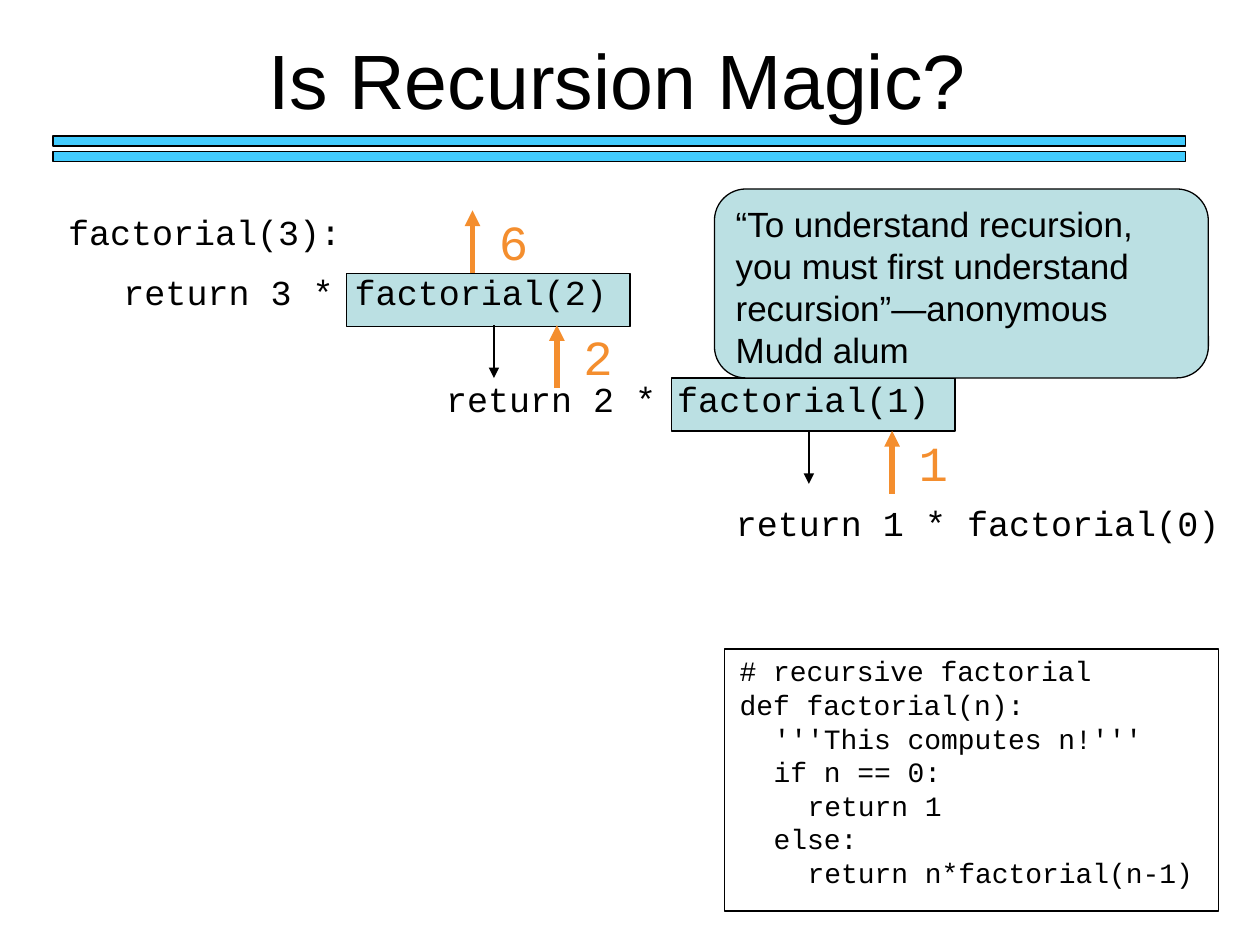
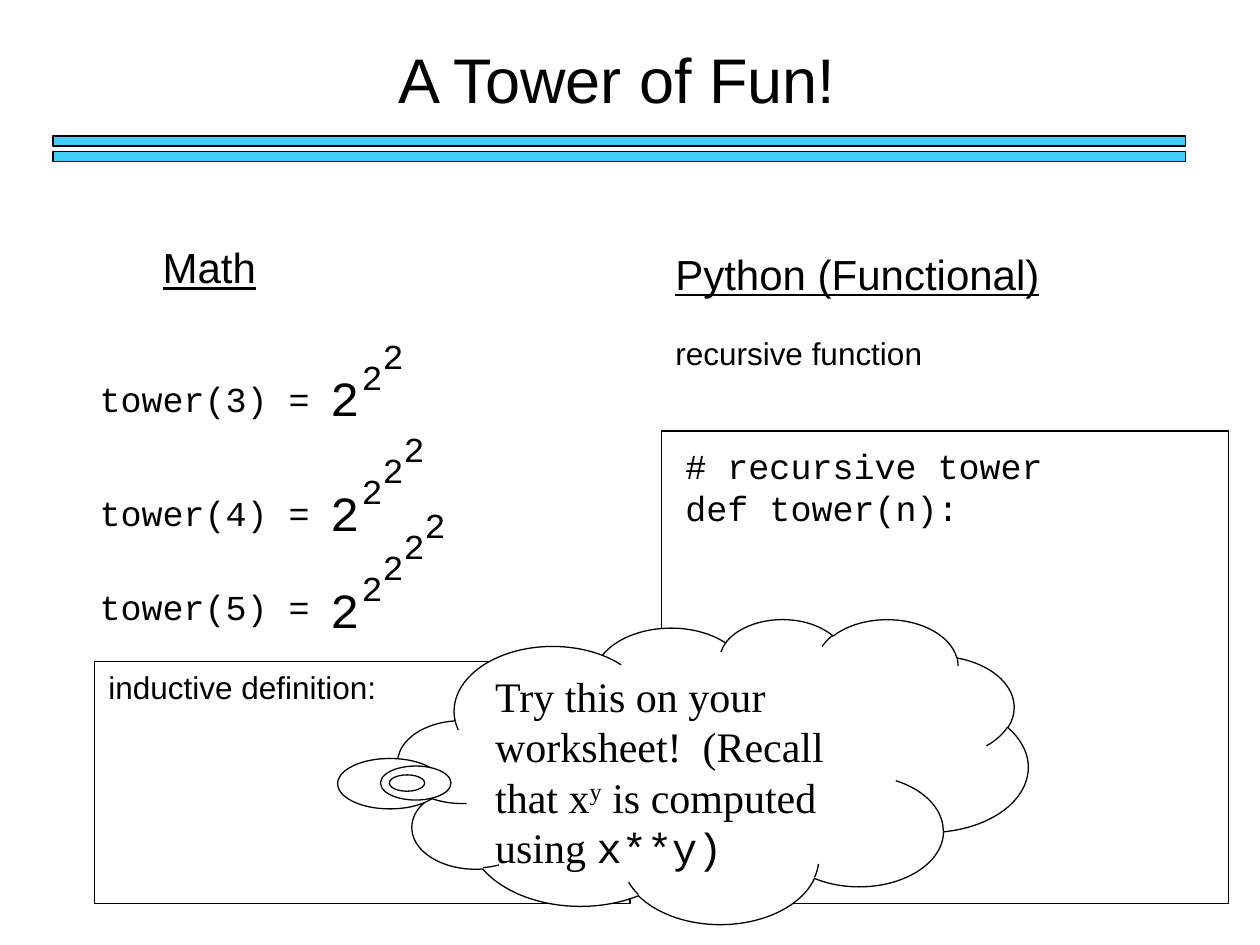
from lxml import etree
from pptx import Presentation
from pptx.dml.color import RGBColor
from pptx.enum import shapes, text
from pptx.oxml.ns import qn
from pptx.util import Inches, Pt

COLORS = {"ink": "000000", "bar": "42CBFD", "call": "BBE0E3",
          "result": "F48E2E", "paper": "FFFFFF"}
SANS, MONO, SERIF = "Arial", "Courier New", "Times New Roman"
SHAPE = shapes.MSO_SHAPE


def color(name):
    return RGBColor.from_string(COLORS[name])


def style(span, size, font, ink="ink", underline=False):
    span.font.size = Pt(size)
    span.font.name = font
    span.font.color.rgb = color(ink)
    if underline:
        span.font.underline = True


def add_text(page, box, content, size, font=MONO, ink="ink", underline=False,
             insets=(0.04, 0, 0.04, 0)):
    """Write each line of content as a paragraph and return the text frame."""
    frame = page.shapes.add_textbox(*map(Inches, box)).text_frame
    frame.word_wrap = True
    (frame.margin_left, frame.margin_top,
     frame.margin_right, frame.margin_bottom) = map(Inches, insets)
    frame.text = content
    for para in frame.paragraphs:
        for span in para.runs:
            style(span, size, font, ink, underline)
    return frame


def add_box(page, box, fill=None, kind=SHAPE.RECTANGLE):
    shape = page.shapes.add_shape(kind, *map(Inches, box))
    shape.shadow.inherit = False
    if fill:
        shape.fill.solid()
        shape.fill.fore_color.rgb = color(fill)
    else:
        shape.fill.background()
    shape.line.color.rgb = color("ink")
    shape.line.width = Pt(0.75)
    return shape


def add_arrow(page, x, start, end, ink="ink", width=0.75):
    """Draw a vertical arrow that points at end."""
    arrow = page.shapes.add_connector(
        shapes.MSO_CONNECTOR.STRAIGHT, *map(Inches, (x, start, x, end)))
    arrow.line.color.rgb = color(ink)
    arrow.line.width = Pt(width)
    etree.SubElement(arrow.line._get_or_add_ln(), qn("a:tailEnd"), type="triangle")
    etree.SubElement(arrow._element.spPr, qn("a:effectLst"))


def add_heading(page, title, size):
    frame = add_text(page, (0.42, 0, 9, 1.25), title, size, SANS,
                     insets=(0.1, 0.05, 0.14, 0.05))
    frame.vertical_anchor = text.MSO_ANCHOR.MIDDLE
    frame.paragraphs[0].alignment = text.PP_ALIGN.CENTER
    for top in (1.08, 1.2):
        add_box(page, (0.42, top, 8.99, 0.08), "bar")


def add_returned_value(page, x, tip, value):
    add_arrow(page, x, tip + 0.5, tip, "result", 3)
    add_text(page, (x + 0.17, tip + 0.01, 0.4, 0.54), value, 28, ink="result")


def add_call_chain(page):
    call_boxes = [(2.75, 2.17), (5.33, 3)]
    for left, top in call_boxes:
        add_box(page, (left, top, 2.25, 0.42), "call")
    add_text(page, (0.5, 1.67, 2.83, 0.43), "factorial(3):", 20)
    for left, top, n in [(0.94, 2.15, 3), (3.5, 3, 2), (5.8, 3.98, 1)]:
        add_text(page, (left, top, 4, 0.43), f"return {n} * factorial({n - 1})", 20)
    # Calls go down, results come back up
    for x, top in [(3.92, 2.58), (6.42, 3.42)]:
        add_arrow(page, x, top, top + 0.42)
    for x, tip, value in [(7.08, 3.42, "1"), (4.42, 2.58, "2"), (3.75, 1.67, "6")]:
        add_returned_value(page, x, tip, value)


def add_factorial_code(page, box):
    left, top, width, _ = box
    code = [(0, "# recursive factorial"), (0, "def factorial(n):"),
            (1, "'''This computes n!'''"), (1, "if n == 0:"), (2, "return 1"),
            (1, "else:"), (2, "return n*factorial(n-1)")]
    frame = add_text(page, (left + 0.08, top + 0.04, width - 0.1, 1.87),
                     "\n".join(line for _, line in code), 16)
    for para, (level, _) in zip(frame.paragraphs, code):
        para._p.get_or_add_pPr().set("marL", str(Inches(0.27 * level)))
    add_box(page, box)


def add_quote(page, box):
    left, top, width, height = box
    add_box(page, box, "call", SHAPE.ROUNDED_RECTANGLE)
    add_text(page, (left + 0.07, top + 0.07, width - 0.16, height - 0.03),
             "“To understand recursion, you must first understand "
             "recursion”—anonymous Mudd alum", 20, SANS,
             insets=(0.1, 0.04, 0.1, 0.04))


def add_tower(page, height, label_top, base_top):
    """Write tower(n) = 2^2^... with n twos, each a step up and right."""
    add_text(page, (0.75, label_top, 2.1, 0.43), f"tower({height}) =", 20)
    add_text(page, (2.58, base_top, 0.5, 0.54), "2", 28)
    for step in range(height - 1):
        exponent = (2.83 + step / 6, base_top - 0.1 - step / 6, 0.5, 0.43)
        add_text(page, exponent, "2", 20)


def add_math_column(page):
    add_text(page, (1.25, 1.92, 1.89, 0.49), "Math", 24, SANS, underline=True)
    for height, label_top, base_top in [(3, 3, 2.92), (4, 3.9, 3.83), (5, 4.65, 4.6)]:
        add_tower(page, height, label_top, base_top)
    add_box(page, (0.75, 5.25, 4.25, 1.92))
    add_text(page, (0.82, 5.3, 2.5, 0.39), "inductive definition:", 18, SANS)


def add_python_column(page, box):
    left, top, width, _ = box
    frame = add_text(page, (left + 0.07, 1.97, 3.5, 1.07),
                     "Python (Functional)\nrecursive function", 24, SANS)
    heading, caption = frame.paragraphs
    heading.runs[0].font.underline = True
    caption.runs[0].font.size = Pt(18)
    caption.space_before = Pt(20.5)
    add_box(page, box)
    add_text(page, (left + 0.15, top + 0.11, width - 0.3, 0.75),
             "# recursive tower\ndef tower(n):", 20)


def add_thought_cloud(page, box):
    left, top, _, _ = box
    add_box(page, box, "paper", SHAPE.CLOUD)
    # Trail of bubbles
    for dx, dy, width, height in [(-0.48, 1.11, 0.83, 0.4),
                                  (-0.14, 1.17, 0.56, 0.27),
                                  (-0.07, 1.24, 0.28, 0.13)]:
        add_box(page, (left + dx, top + dy, width, height), "paper", SHAPE.OVAL)
    frame = add_text(page, (left + 0.69, top + 0.37, 3.26, 1.61),
                     "Try this on your worksheet!  (Recall that x", 24, SERIF,
                     insets=(0.08, 0.04, 0.08, 0.04))
    para = frame.paragraphs[0]
    for words, font in [("y", SERIF), (" is computed using ", SERIF), ("x**y)", MONO)]:
        span = para.add_run()
        span.text = words
        style(span, 24, font)
    para.runs[1]._r.get_or_add_rPr().set("baseline", "30000")


def build_recursion(page):
    add_heading(page, "Is Recursion Magic?", 44)
    add_call_chain(page)
    add_factorial_code(page, (5.75, 5.15, 3.92, 2.08))
    add_quote(page, (5.67, 1.5, 3.92, 1.5))


def build_tower(page):
    add_heading(page, "A Tower of Fun!", 36)
    add_python_column(page, (5.25, 3.42, 4.5, 3.75))
    add_math_column(page)
    add_thought_cloud(page, (3.16, 4.91, 5, 2.42))


def main():
    deck = Presentation()
    deck.slide_width, deck.slide_height = Inches(10), Inches(7.5)
    for build in (build_recursion, build_tower):
        build(deck.slides.add_slide(deck.slide_layouts[6]))
    deck.save("out.pptx")


if __name__ == "__main__":
    main()
